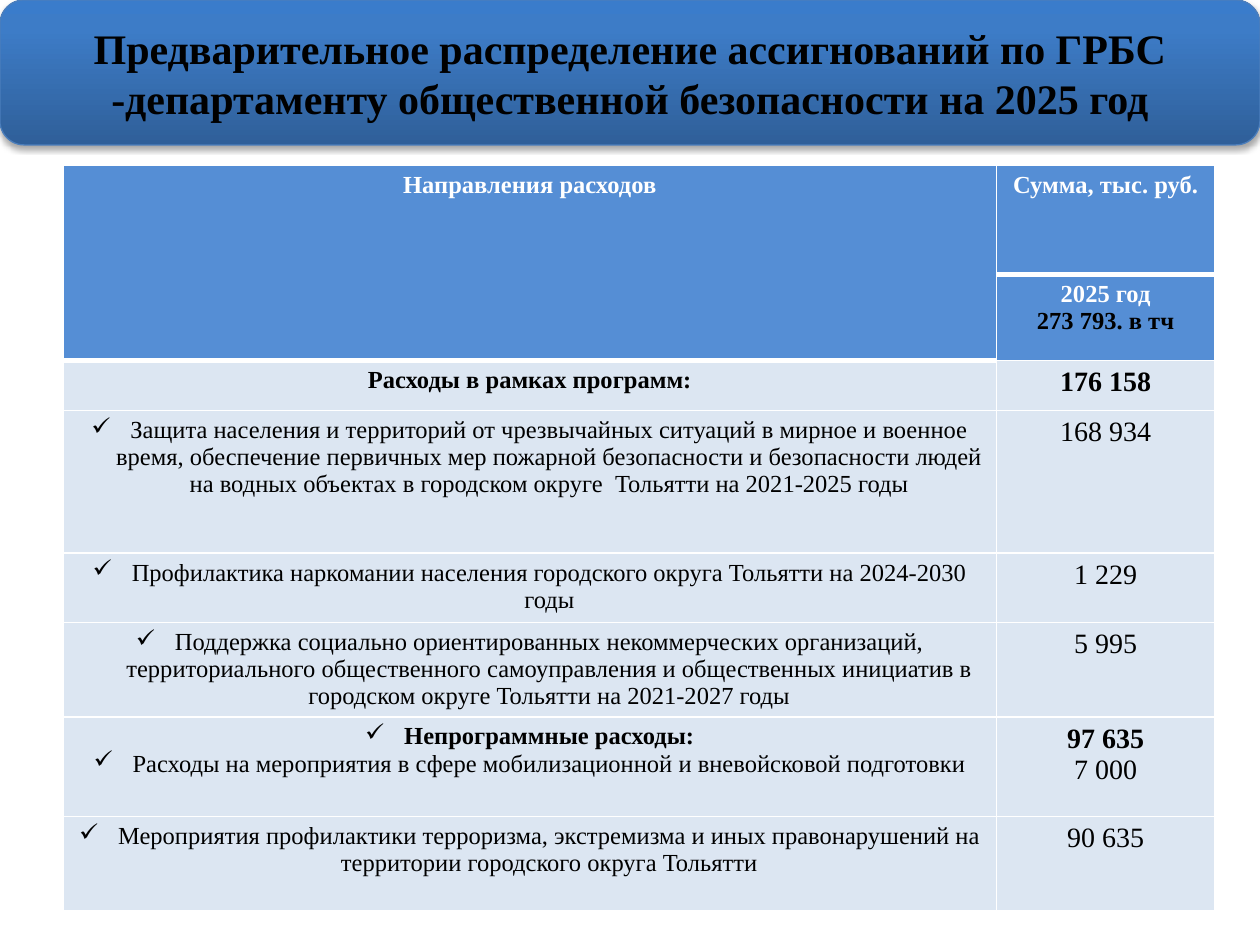
from lxml import etree
from pptx import Presentation
from pptx.dml.color import RGBColor
from pptx.enum.shapes import MSO_SHAPE as Shape
from pptx.enum.text import MSO_ANCHOR as Anchor, PP_ALIGN as Align
from pptx.oxml.ns import qn
from pptx.util import Inches, Pt

FONT = "Times New Roman"
BLACK, WHITE = "000000", "FFFFFF"
HEADER_BLUE, BODY_BLUE = "558ED5", "DCE6F2"
ROW_HEIGHTS = [0.87, 0.68, 0.4, 1.13, 0.55, 0.75, 0.79, 0.75]

TITLE = ("Предварительное распределение ассигнований по ГРБС "
         "-департаменту общественной безопасности на 2025 год")

# Each cell is a list of (text, format) paragraphs
HEAD = dict(bold=True, color=WHITE)
TOTAL = dict(bold=True)
ITEM = dict(bullet="✓")
ITEM_TOTAL = dict(bullet="✓", bold=True)
AMOUNT = dict(size=16)
AMOUNT_TOTAL = dict(size=16, bold=True)

HEADER_ROWS = [
    ([("Направления расходов", HEAD)], [("Сумма, тыс. руб.", HEAD)]),
    ([], [("2025 год", HEAD), ("273 793. в тч", TOTAL)]),
]
EXPENSE_ROWS = [
    ([("Расходы в рамках программ:", TOTAL)], [("176 158", AMOUNT_TOTAL)]),
    ([("Защита населения и территорий от чрезвычайных ситуаций в мирное и военное "
       "время, обеспечение первичных мер пожарной безопасности и безопасности людей "
       "на водных объектах в городском округе  Тольятти на 2021-2025 годы", ITEM)],
     [("168 934", AMOUNT)]),
    ([("Профилактика наркомании населения городского округа Тольятти "
       "на 2024-2030 годы", ITEM)],
     [("1 229", AMOUNT)]),
    ([("Поддержка социально ориентированных некоммерческих организаций, "
       "территориального общественного самоуправления и общественных инициатив в "
       "городском округе Тольятти на 2021-2027 годы", ITEM)],
     [("5 995", AMOUNT)]),
    ([("Непрограммные расходы:", ITEM_TOTAL),
      ("Расходы на мероприятия в сфере мобилизационной и вневойсковой подготовки", ITEM)],
     [("97 635", AMOUNT_TOTAL), ("7 000", AMOUNT)]),
    ([("Мероприятия профилактики терроризма, экстремизма и иных правонарушений на "
       "территории городского округа Тольятти", ITEM)],
     [("90 635", AMOUNT)]),
]


def rgb(hex_color):
    return RGBColor.from_string(hex_color)


def add_element(parent, tag, **attributes):
    element = etree.SubElement(parent, qn(tag))
    for name, value in attributes.items():
        element.set(name, str(value))
    return element


def write(paragraph, text, size=14, bold=False, color=BLACK, bullet=None):
    paragraph.alignment = Align.CENTER
    if bullet:
        properties = paragraph._p.get_or_add_pPr()
        properties.set("marL", str(Inches(0.31)))
        properties.set("indent", str(Inches(-0.31)))
        add_element(properties, "a:buChar", char=bullet)
    run = paragraph.add_run()
    run.text = text
    run.font.name = FONT
    run.font.size = Pt(size)
    run.font.bold = bold
    run.font.color.rgb = rgb(color)


def set_gradient(shape, stops, angle):
    shape.fill.gradient()
    gradient = shape._element.spPr.find(qn("a:gradFill"))
    for child in list(gradient):
        gradient.remove(child)
    stop_list = add_element(gradient, "a:gsLst")
    for position, color in stops:
        stop = add_element(stop_list, "a:gs", pos=position * 1000)
        add_element(stop, "a:srgbClr", val=color)
    add_element(gradient, "a:lin", ang=angle * 60000, scaled=0)


def set_shadow(shape):
    shape.shadow.inherit = False
    effects = shape._element.spPr.find(qn("a:effectLst"))
    shadow = add_element(effects, "a:outerShdw", blurRad=Pt(3.1), dist=Pt(1.8),
                         dir=90 * 60000, rotWithShape=0)
    color = add_element(shadow, "a:srgbClr", val=BLACK)
    add_element(color, "a:alpha", val=35000)


def set_borders(cell, bottom_width):
    properties = cell._tc.get_or_add_tcPr()
    widths = {"a:lnL": 1, "a:lnR": 1, "a:lnT": 1, "a:lnB": bottom_width}
    for index, (side, width) in enumerate(widths.items()):
        border = add_element(properties, side, w=Pt(width))
        add_element(add_element(border, "a:solidFill"), "a:srgbClr", val=WHITE)
        properties.insert(index, border)


def fill_cell(cell, paragraphs, fill, bottom_width=1):
    cell.fill.solid()
    cell.fill.fore_color.rgb = rgb(fill)
    set_borders(cell, bottom_width)
    frame = cell.text_frame
    for index, (text, style) in enumerate(paragraphs):
        write(frame.add_paragraph() if index else frame.paragraphs[0], text, **style)


def add_title_banner(slide, left, top, width, height):
    banner = slide.shapes.add_shape(Shape.ROUNDED_RECTANGLE, left, top, width, height)
    set_gradient(banner, [(0, "2F5F99"), (80, "3D7CC7"), (100, "3A7CCB")], 270)
    banner.line.color.rgb = rgb("4B7EBC")
    banner.line.width = Pt(0.75)
    set_shadow(banner)
    banner.text_frame.vertical_anchor = Anchor.MIDDLE
    banner.text_frame.word_wrap = True
    write(banner.text_frame.paragraphs[0], TITLE, size=24, bold=True)


def add_expense_table(slide, left, top, width, height):
    rows = HEADER_ROWS + EXPENSE_ROWS
    table = slide.shapes.add_table(len(rows), 2, left, top, width, height).table
    amount_width = Inches(1.73)
    table.columns[0].width = width - amount_width
    table.columns[1].width = amount_width
    for row, row_height in zip(table.rows, ROW_HEIGHTS):
        row.height = Inches(row_height)

    for row_index, contents in enumerate(rows):
        is_header = row_index < len(HEADER_ROWS)
        for column, paragraphs in enumerate(contents):
            # A thick rule closes the first row and the merged heading
            thick = row_index == 0 or (row_index == 1 and column == 0)
            fill_cell(table.cell(row_index, column), paragraphs,
                      HEADER_BLUE if is_header else BODY_BLUE, 3 if thick else 1)
    table.cell(0, 0).merge(table.cell(1, 0))


def main():
    deck = Presentation()
    deck.slide_width, deck.slide_height = Inches(10), Inches(7.5)
    slide = deck.slides.add_slide(deck.slide_layouts[6])
    add_title_banner(slide, 0, 0, deck.slide_width, Inches(1.15))
    add_expense_table(slide, Inches(0.5), Inches(1.31), Inches(9.14),
                      Inches(sum(ROW_HEIGHTS)))
    deck.save("out.pptx")


if __name__ == "__main__":
    main()
